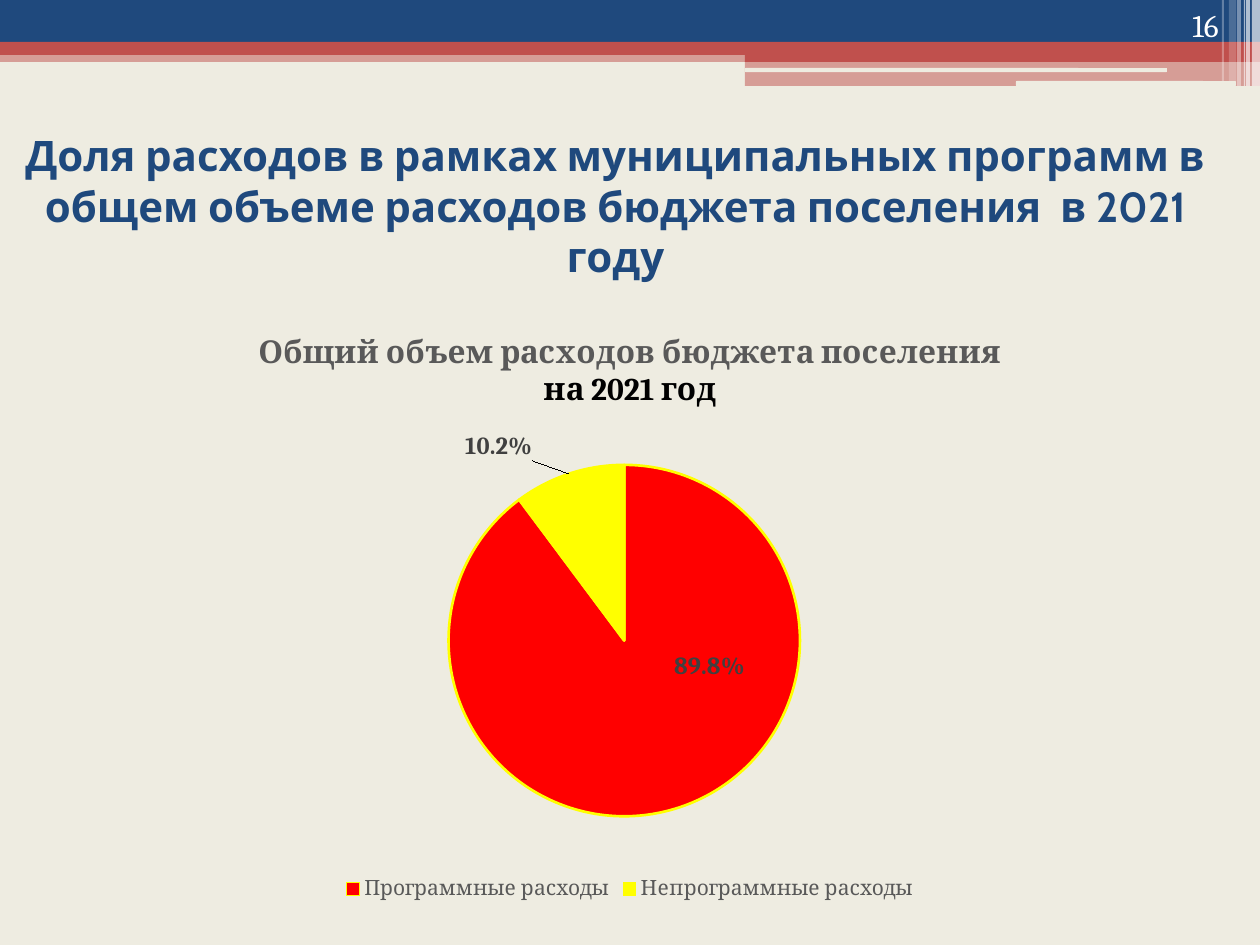
from typing import NamedTuple

from lxml.etree import SubElement
from pptx import Presentation
from pptx.chart.data import CategoryChartData
from pptx.dml.color import RGBColor
from pptx.enum.chart import XL_CHART_TYPE, XL_LABEL_POSITION, XL_LEGEND_POSITION
from pptx.enum.shapes import MSO_SHAPE
from pptx.enum.text import MSO_ANCHOR, MSO_AUTO_SIZE, PP_ALIGN
from pptx.oxml.ns import qn
from pptx.util import Pt

PX = 914400 // 126
NAVY, RED, CREAM, WHITE = "1F497D", "C0504D", "EEECE1", "FFFFFF"
GREY, DARK, BLACK = "595959", "404040", "000000"


class Bar(NamedTuple):
    left: int
    top: int
    width: int
    height: int
    fill: str
    alpha: int = 100
    kind: MSO_SHAPE = MSO_SHAPE.RECTANGLE


class Slice(NamedTuple):
    name: str
    value: float
    fill: str
    spot: XL_LABEL_POSITION
    shift: tuple[float, float]


ROUND = MSO_SHAPE.ROUNDED_RECTANGLE
BARS = [
    Bar(0, 50, 1260, 12, RED, 50),
    Bar(0, 0, 1260, 42, NAVY),
    Bar(0, 42, 1260, 13, RED),
    Bar(745, 49, 515, 13, RED),
    Bar(745, 61, 515, 25, RED, 50),
    Bar(745, 68, 422, 4, CREAM, 100, ROUND),
    Bar(1016, 81, 220, 5, CREAM, 100, ROUND),
    Bar(1252, 0, 8, 86, WHITE, 65),
    Bar(1246, 0, 4, 86, WHITE, 65),
    Bar(1244, 0, 1, 86, WHITE, 60),
    Bar(1237, 0, 4, 86, WHITE, 40),
    Bar(1229, 0, 7, 81, WHITE, 20),
    Bar(1222, 0, 2, 81, WHITE, 30),
]
SLICES = [
    Slice("Программные расходы", 0.898, "FF0000",
          XL_LABEL_POSITION.INSIDE_END, (0.06, -0.2)),
    Slice("Непрограммные расходы", 0.102, "FFFF00",
          XL_LABEL_POSITION.OUTSIDE_END, (-0.03, -0.01)),
]


def paint(fill, color: str) -> None:
    fill.solid()
    fill.fore_color.rgb = RGBColor.from_string(color)


def style(font, color: str, **values) -> None:
    for key, value in values.items():
        setattr(font, key, value)
    font.color.rgb = RGBColor.from_string(color)


def place(shape, *box: int) -> None:
    for key, value in zip(("left", "top", "width", "height"), box):
        setattr(shape, key, value * PX)


def draw_bar(slide, bar: Bar) -> None:
    shape = slide.shapes.add_shape(bar.kind, *(n * PX for n in bar[:4]))
    shape.shadow.inherit = False
    paint(shape.fill, bar.fill)
    shape.line.fill.background()
    if bar.alpha < 100:
        color = shape.fill._xPr.find(".//" + qn("a:srgbClr"))
        SubElement(color, qn("a:alpha"), val=str(bar.alpha * 1000))


def write(shape, text: str, align: PP_ALIGN, anchor: MSO_ANCHOR,
          color: str, **values) -> None:
    frame = shape.text_frame
    frame.word_wrap = True
    frame.auto_size = MSO_AUTO_SIZE.NONE
    frame.vertical_anchor = anchor
    par = frame.paragraphs[0]
    par.alignment = align
    run = par.add_run()
    run.text = text
    style(run.font, color, **values)


def add_layout(parent, index: int, **values) -> None:
    """Give a chart part a manual layout, as shares of the chart's size."""
    for old in parent.findall(qn("c:layout")):
        parent.remove(old)
    layout = SubElement(parent, qn("c:layout"))
    parent.insert(index, layout)
    manual = SubElement(layout, qn("c:manualLayout"))
    for key, value in values.items():
        SubElement(manual, qn("c:" + key), val=str(value))


def draw_pie(slide) -> None:
    data = CategoryChartData(number_format="0.0%")
    data.categories = [s.name for s in SLICES]
    data.add_series("Series 1", [s.value for s in SLICES])
    chart = slide.shapes.add_chart(
        XL_CHART_TYPE.PIE, *(n * PX for n in (63, 310, 1134, 596)), data).chart
    style(chart.font, BLACK, name="Cambria", size=Pt(10))

    chart.has_title = True
    frame = chart.chart_title.text_frame
    lines = [("Общий объем расходов бюджета поселения", GREY),
             ("на 2021 год", BLACK)]
    for i, (text, color) in enumerate(lines):
        par = frame.add_paragraph() if i else frame.paragraphs[0]
        run = par.add_run()
        run.text = text
        style(run.font, color, name="Cambria", size=Pt(18), bold=True)

    chart.has_legend = True
    chart.legend.position = XL_LEGEND_POSITION.BOTTOM
    chart.legend.include_in_layout = False
    style(chart.legend.font, GREY, name="Cambria", size=Pt(12))

    plot = chart.plots[0]
    plot.vary_by_categories = True
    for i, part in enumerate(SLICES):
        point = plot.series[0].points[i]
        paint(point.format.fill, part.fill)
        paint(point.format.line.fill, "FFFF00")
        point.format.line.width = Pt(1.5)
        label = point.data_label
        style(label.font, DARK, name="Cambria", size=Pt(14), bold=True)
        label.position = part.spot
        x, y = part.shift
        add_layout(label._dLbl, 1, x=x, y=y)
    area = chart._chartSpace.find(".//" + qn("c:plotArea"))
    add_layout(area, 0, layoutTarget="inner", xMode="edge", yMode="edge",
               x=0.34, y=0.26, w=0.31, h=0.59)


def main() -> None:
    deck = Presentation()
    deck.slide_width, deck.slide_height = 1260 * PX, 945 * PX
    slide = deck.slides.add_slide(deck.slide_layouts[5])
    paint(slide.background.fill, CREAM)
    for bar in BARS:
        draw_bar(slide, bar)

    title = slide.shapes.title
    place(title, 0, 106, 1231, 199)
    write(title, "Доля расходов в рамках муниципальных программ в общем "
          "объеме расходов бюджета поселения  в 2021 году",
          PP_ALIGN.CENTER, MSO_ANCHOR.MIDDLE, NAVY,
          name="Cabin", size=Pt(24), bold=True)
    draw_pie(slide)
    page = slide.shapes.add_textbox(*(n * PX for n in (1126, 0, 105, 50)))
    write(page, "16", PP_ALIGN.RIGHT, MSO_ANCHOR.BOTTOM, WHITE,
          name="Cambria", size=Pt(18))
    deck.save("out.pptx")


if __name__ == "__main__":
    main()
